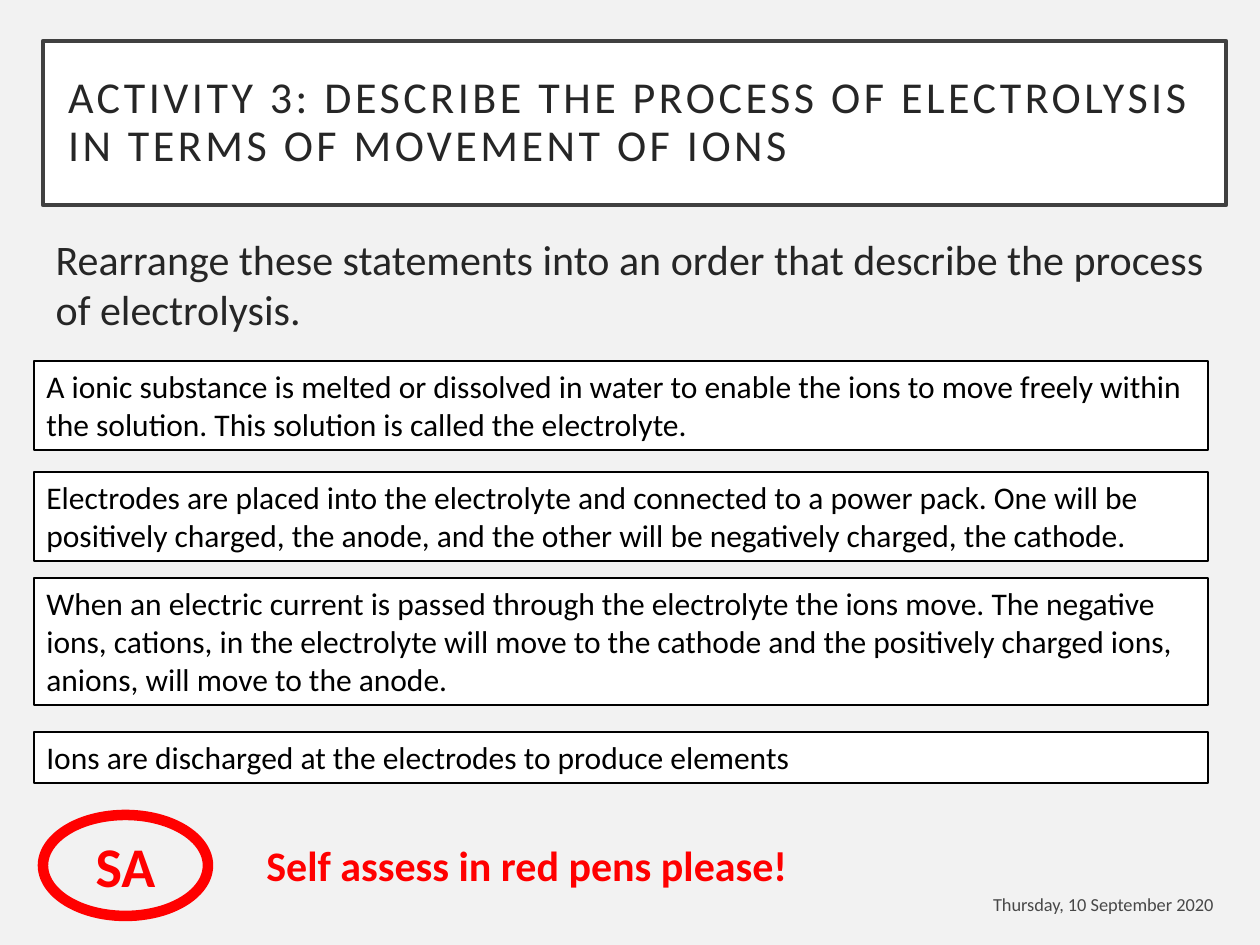
from lxml.etree import SubElement
from pptx import Presentation
from pptx.dml.color import RGBColor
from pptx.enum.shapes import MSO_SHAPE
from pptx.enum.text import MSO_ANCHOR, MSO_AUTO_SIZE, PP_ALIGN
from pptx.oxml.ns import qn
from pptx.util import Inches, Pt

EMU_PER_PX = 914400 / 126
FONT = "Calibri"
COLORS = {
    "background": "F2F2F2",
    "panel": "FFFFFF",
    "frame": "404040",
    "heading": "262626",
    "ink": "000000",
    "accent": "FF0000",
}

# top and height in px, then the wording
STATEMENTS = [
    (361, 89, "A ionic substance is melted or dissolved in water to enable the ions to "
              "move freely within the solution. This solution is called the electrolyte."),
    (472, 89, "Electrodes are placed into the electrolyte and connected to a power pack. "
              "One will be positively charged, the anode, and the other will be negatively "
              "charged, the cathode."),
    (578, 127, "When an electric current is passed through the electrolyte the ions move. "
               "The negative ions, cations, in the electrolyte will move to the cathode and "
               "the positively charged ions, anions, will move to the anode."),
    (732, 51, "Ions are discharged at the electrodes to produce elements"),
]


def px(length):
    return round(length * EMU_PER_PX)


def color(name):
    return RGBColor.from_string(COLORS[name])


def write(shape, text, size, ink="ink", bold=False, align=PP_ALIGN.LEFT,
          anchor=MSO_ANCHOR.TOP, inset=None, line_spacing=1.0, space_before=0,
          tracking=None, opacity=None):
    """Put one formatted paragraph in a shape; tracking is in points, opacity in percent."""
    frame = shape.text_frame
    frame.word_wrap = True
    frame.auto_size = MSO_AUTO_SIZE.NONE
    frame.vertical_anchor = anchor
    if inset is not None:
        frame.margin_left = frame.margin_right = px(inset)
        frame.margin_top = frame.margin_bottom = px(inset)
    paragraph = frame.paragraphs[0]
    paragraph.alignment = align
    paragraph.line_spacing = line_spacing
    paragraph.space_before = Pt(space_before)
    run = paragraph.add_run()
    run.text = text
    run.font.name = FONT
    run.font.size = Pt(size)
    run.font.bold = bold
    run.font.color.rgb = color(ink)
    properties = run.font._element
    if tracking is not None:
        properties.set("spc", str(round(tracking * 100)))
    if opacity is not None:
        ink_element = properties.find(".//" + qn("a:srgbClr"))
        SubElement(ink_element, qn("a:alpha")).set("val", str(opacity * 1000))
    return paragraph


class SlideBuilder:
    def __init__(self, presentation):
        self.slide = presentation.slides.add_slide(presentation.slide_layouts[1])
        background = self.slide.background.fill
        background.solid()
        background.fore_color.rgb = color("background")

    def place(self, shape, box):
        shape.left, shape.top, shape.width, shape.height = map(px, box)

    def paint(self, shape, fill, line, line_width):
        if fill:
            shape.fill.solid()
            shape.fill.fore_color.rgb = color(fill)
        else:
            shape.fill.background()
        shape.line.color.rgb = color(line)
        shape.line.width = Pt(line_width)

    def title(self, box, text):
        heading = self.slide.shapes.title
        self.place(heading, box)
        self.paint(heading, "panel", "frame", 2.5)
        write(heading, text, 25.2, "heading", anchor=MSO_ANCHOR.MIDDLE, inset=25,
              line_spacing=0.9, tracking=2)

    def body(self, box, text):
        instruction = self.slide.placeholders[1]
        self.place(instruction, box)
        paragraph = write(instruction, text, 24, "heading", space_before=10)
        properties = paragraph._p.get_or_add_pPr()
        properties.set("marL", "0")
        properties.set("indent", "0")
        SubElement(properties, qn("a:buNone"))

    def panel(self, preset, box, text, size, fill=None, line="ink", line_width=0.75, **style):
        shape = self.slide.shapes.add_shape(preset, *map(px, box))
        shape.shadow.inherit = False
        self.paint(shape, fill, line, line_width)
        write(shape, text, size, **style)

    def label(self, box, text, size, **style):
        write(self.slide.shapes.add_textbox(*map(px, box)), text, size, **style)


def main():
    presentation = Presentation()
    presentation.slide_width, presentation.slide_height = Inches(10), Inches(7.5)
    builder = SlideBuilder(presentation)
    builder.title((43, 41, 1183, 164),
                  "ACTIVITY 3: DESCRIBE THE PROCESS OF ELECTROLYSIS "
                  "IN TERMS OF MOVEMENT OF IONS")
    builder.body((43, 227, 1184, 605),
                 "Rearrange these statements into an order that describe the process "
                 "of electrolysis.")
    builder.label((941, 882, 285, 44), "Thursday, 10 September 2020", 10.5,
                  align=PP_ALIGN.RIGHT, anchor=MSO_ANCHOR.MIDDLE, opacity=70)
    for top, height, statement in STATEMENTS:
        builder.panel(MSO_SHAPE.RECTANGLE, (34, top, 1174, height), statement, 18, fill="panel")
    builder.panel(MSO_SHAPE.OVAL, (43, 815, 165, 101), "SA", 32, line="accent", line_width=6,
                  ink="accent", bold=True, align=PP_ALIGN.CENTER, anchor=MSO_ANCHOR.MIDDLE)
    builder.label((254, 833, 733, 63), "Self assess in red pens please!", 24,
                  ink="accent", bold=True)
    presentation.save("out.pptx")


if __name__ == "__main__":
    main()
